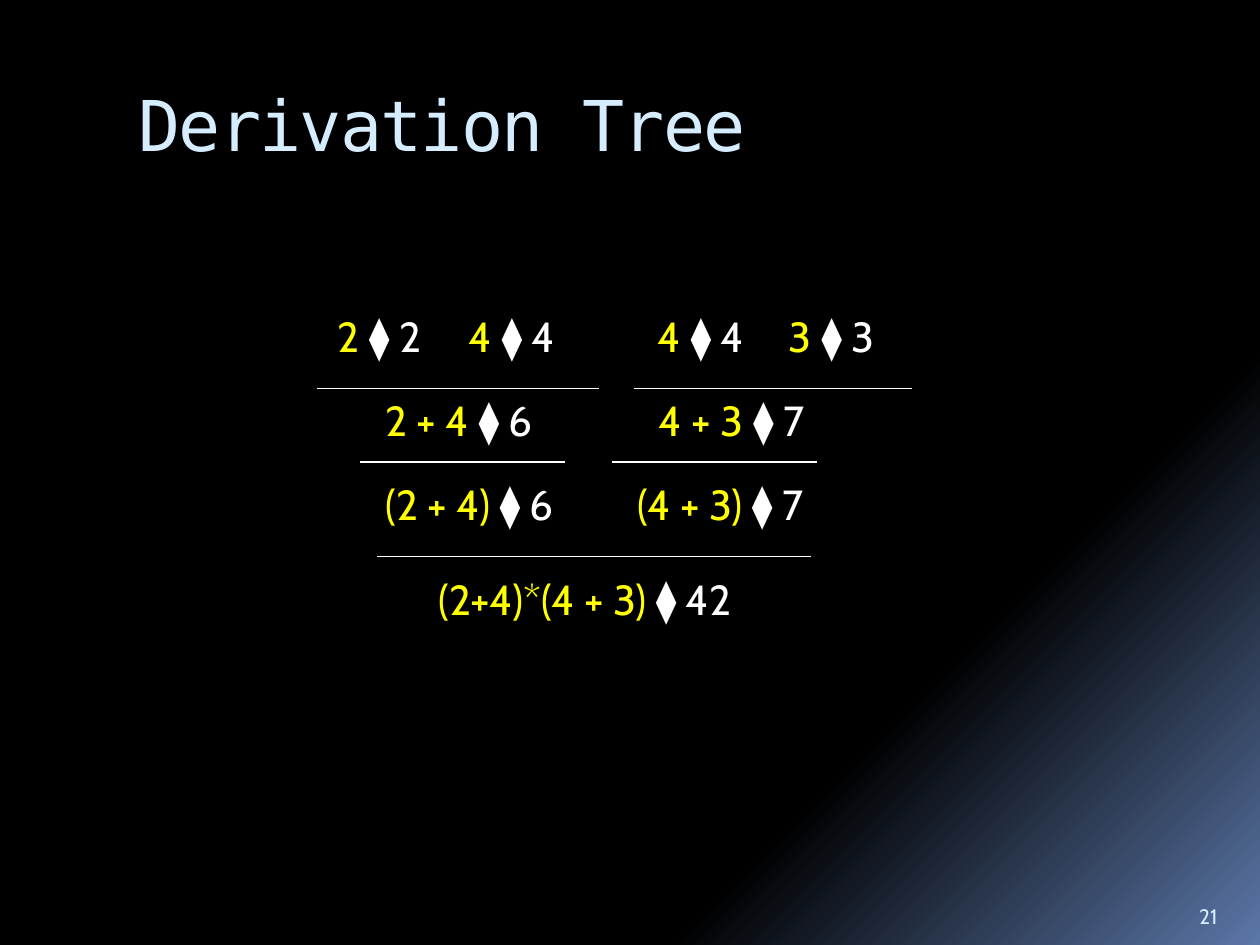
from typing import NamedTuple

from lxml import etree
from pptx import Presentation
from pptx.dml.color import RGBColor
from pptx.enum.shapes import MSO_CONNECTOR
from pptx.enum.text import MSO_ANCHOR
from pptx.oxml.ns import qn
from pptx.util import Pt

STRAIGHT = MSO_CONNECTOR.STRAIGHT
TOP, BOTTOM = MSO_ANCHOR.TOP, MSO_ANCHOR.BOTTOM
COLORS = {"black": "000000", "glow": "5B77A8", "title": "D6ECFF",
          "expr": "FFFF00", "value": "FFFFFF"}
BODY_FONT, TITLE_FONT = "Cabin", "DejaVu Sans Mono"
INSET = 7.2
TAB = 75
ROW_HEIGHT = 36


class Judgment(NamedTuple):
    expr: str
    value: str


class Step(NamedTuple):
    left: float
    top: float
    width: float
    judgments: list[Judgment]
    indent: float = 0


class Bar(NamedTuple):
    left: float
    right: float
    y: float


STEPS = [
    Step(180.7, 174.2, 160.6, [Judgment("2", "2"), Judgment("4", "4")], 5),
    Step(363.6, 174.2, 157.7, [Judgment("4", "4"), Judgment("3", "3")], 5),
    Step(213.1, 222, 128, [Judgment("2 + 4", "6")]),
    Step(369.4, 222, 128, [Judgment("4 + 3", "7")]),
    Step(213.1, 270, 128, [Judgment("(2 + 4)", "6")]),
    Step(357.1, 270, 128, [Judgment("(4 + 3)", "7")]),
    Step(228.2, 324, 222, [Judgment("(2+4)*(4 + 3)", "42")], 15),
]
BARS = [
    Bar(181.4, 342, 222), Bar(362.2, 521.3, 222),
    Bar(205.9, 322.6, 264), Bar(349.9, 466.6, 264),
    Bar(215.3, 463.7, 318),
]


def rgb(name: str) -> RGBColor:
    return RGBColor.from_string(COLORS[name])


def add_text(s, runs: list[tuple[str, str]], left: float, top: float, width: float,
             height: float, *, size: float, font: str = BODY_FONT, indent: float = 0,
             margin_top: float = 3.6, anchor=TOP, spacing: float = 0, tab: float = 0) -> None:
    tf = s.shapes.add_textbox(Pt(left), Pt(top), Pt(width), Pt(height)).text_frame
    tf.word_wrap = True
    tf.vertical_anchor = anchor
    tf.margin_left, tf.margin_top = Pt(INSET + indent), Pt(margin_top)
    p = tf.paragraphs[0]
    for text, color in runs:
        r = p.add_run()
        r.text = text
        r.font.size, r.font.name = Pt(size), font
        r.font.color.rgb = rgb(color)
        if spacing:
            r.font._element.set("spc", str(int(spacing * 100)))
    if tab:
        tabs = etree.SubElement(p._p.get_or_add_pPr(), qn("a:tabLst"))
        etree.SubElement(tabs, qn("a:tab"), pos=str(Pt(tab)), algn="l")


def add_step(s, step: Step) -> None:
    runs = []
    for i, judgment in enumerate(step.judgments):
        gap = "\t" if i < len(step.judgments) - 1 else ""
        runs += [(f"{judgment.expr} ", "expr"), (f"⧫ {judgment.value}{gap}", "value")]
    add_text(s, runs, step.left, step.top, step.width, ROW_HEIGHT, size=24,
             indent=step.indent, tab=TAB if len(step.judgments) > 1 else 0)


def add_bar(s, bar: Bar) -> None:
    sp = s.shapes.add_connector(STRAIGHT, Pt(bar.left), Pt(bar.y), Pt(bar.right), Pt(bar.y))
    sp.line.color.rgb = rgb("value")
    sp.line.width = Pt(0.94)
    etree.SubElement(sp._element.spPr, qn("a:effectLst"))


def set_background(s) -> None:
    fill = s.background.fill
    fill.gradient()
    fill.gradient_angle = 315
    for stop, position, color in zip(fill.gradient_stops, (0.73, 1), ("black", "glow")):
        stop.position = position
        stop.color.rgb = rgb(color)


def main() -> None:
    """Build the derivation tree slide."""
    prs = Presentation()
    prs.slide_width, prs.slide_height = Pt(720), Pt(540)
    s = prs.slides.add_slide(prs.slide_layouts[6])
    set_background(s)
    add_text(s, [("Derivation Tree", "title")], 72, 40.3, 612, 72,
             size=40, font=TITLE_FONT, spacing=-1, margin_top=6)
    add_text(s, [("21", "title")], 678.2, 505.4, 36, 28.8, size=12, anchor=BOTTOM)
    for step in STEPS:
        add_step(s, step)
    for bar in BARS:
        add_bar(s, bar)
    prs.save("out.pptx")


if __name__ == "__main__":
    main()
